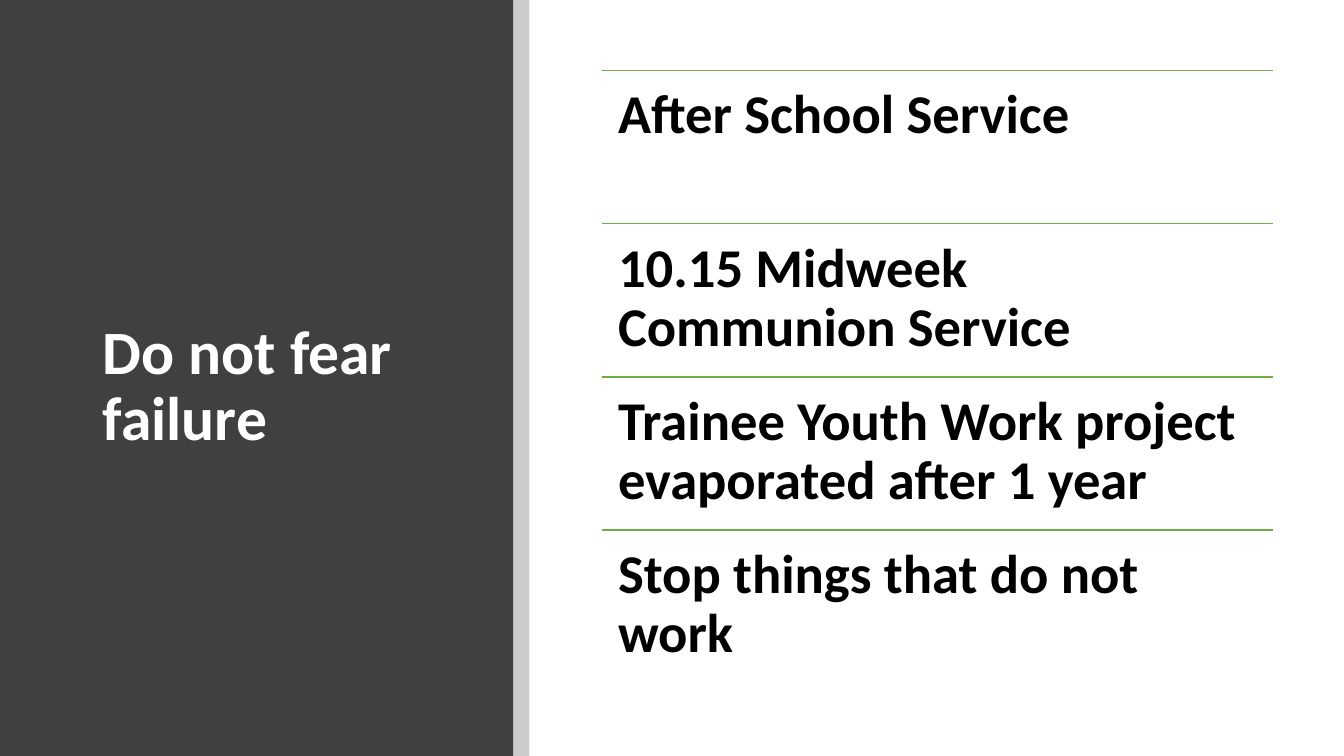
from lxml import etree
from pptx import Presentation
from pptx.dml.color import RGBColor
from pptx.enum.shapes import MSO_CONNECTOR, MSO_SHAPE
from pptx.enum.text import MSO_ANCHOR, MSO_AUTO_SIZE, PP_ALIGN
from pptx.oxml.ns import qn
from pptx.util import Inches, Pt

RECT = MSO_SHAPE.RECTANGLE
LINE = MSO_CONNECTOR.STRAIGHT
TOP, MIDDLE = MSO_ANCHOR.TOP, MSO_ANCHOR.MIDDLE
LEFT = PP_ALIGN.LEFT
FIXED = MSO_AUTO_SIZE.NONE

LESSONS = [
    "After School Service",
    "10.15 Midweek Communion Service",
    "Trainee Youth Work project evaporated after 1 year",
    "Stop things that do not work",
]


def color(code):
    """Turn a hex string into a colour."""
    return RGBColor.from_string(code)


class Deck:
    """Holds the style and the current slide."""

    font = "Calibri"
    dark, white, black, green = "404040", "FFFFFF", "000000", "70AD47"

    def __init__(self, slide):
        """Keep the slide to draw on."""
        self.slide = slide
        self.shapes = slide.shapes

    def letter(self, shape, text, size, code, anchor, inset):
        """Fill a shape with one bold paragraph."""
        frame = shape.text_frame
        frame.word_wrap = True
        frame.auto_size = FIXED
        frame.vertical_anchor = anchor
        frame.margin_left = frame.margin_right = Inches(inset[0])
        frame.margin_top = frame.margin_bottom = Inches(inset[1])
        para = frame.paragraphs[0]
        para.alignment = LEFT
        para.line_spacing = 0.9
        para.space_before = Pt(0)
        run = para.add_run()
        run.text = text
        font = run.font
        font.name, font.size, font.bold = self.font, Pt(size), True
        font.color.rgb = color(code)

    def title(self, text, *box):
        """Place and format the title."""
        shape = self.shapes.title
        shape.left, shape.top, shape.width, shape.height = map(Inches, box)
        self.letter(shape, text, 44, self.white, MIDDLE, (0.1, 0.05))

    def panel(self, code, *box, alpha=None):
        """Draw a plain rectangle behind the title."""
        shape = self.shapes.add_shape(RECT, *map(Inches, box))
        shape.shadow.inherit = False
        shape.fill.solid()
        shape.fill.fore_color.rgb = color(code)
        shape.line.fill.background()
        if alpha is not None:
            tone = shape.element.spPr.find(".//" + qn("a:srgbClr"))
            etree.SubElement(tone, qn("a:alpha")).set("val", str(alpha * 1000))
        self.shapes.title.element.addprevious(shape.element)

    def rule(self, left, top, width):
        """Draw a thin level line."""
        ends = map(Inches, (left, top, left + width, top))
        line = self.shapes.add_connector(LINE, *ends)
        line.line.color.rgb = color(self.green)
        line.line.width = Pt(1)
        etree.SubElement(line.element.spPr, qn("a:effectLst"))

    def text(self, text, *box):
        """Add a body text box."""
        shape = self.shapes.add_textbox(*map(Inches, box))
        self.letter(shape, text, 39, self.black, TOP, (0.16, 0.16))


def main():
    """Build and save the slide."""
    show = Presentation()
    show.slide_width, show.slide_height = Inches(13.33), Inches(7.5)
    deck = Deck(show.slides.add_slide(show.slide_layouts[5]))
    deck.panel(deck.dark, 0, 0, 5.09, 7.5)
    deck.title("Do not fear failure", 0.92, 0.89, 3.65, 5.91)
    deck.panel(deck.black, 5.09, 0, 0.16, 7.5, alpha=20)
    left, top, width, step = 5.97, 0.7, 6.66, 1.52
    for row, lesson in enumerate(LESSONS):
        level = top + row * step
        deck.rule(left, level, width)
        deck.text(lesson, left, level, width, step)
    show.save("out.pptx")


if __name__ == "__main__":
    main()
